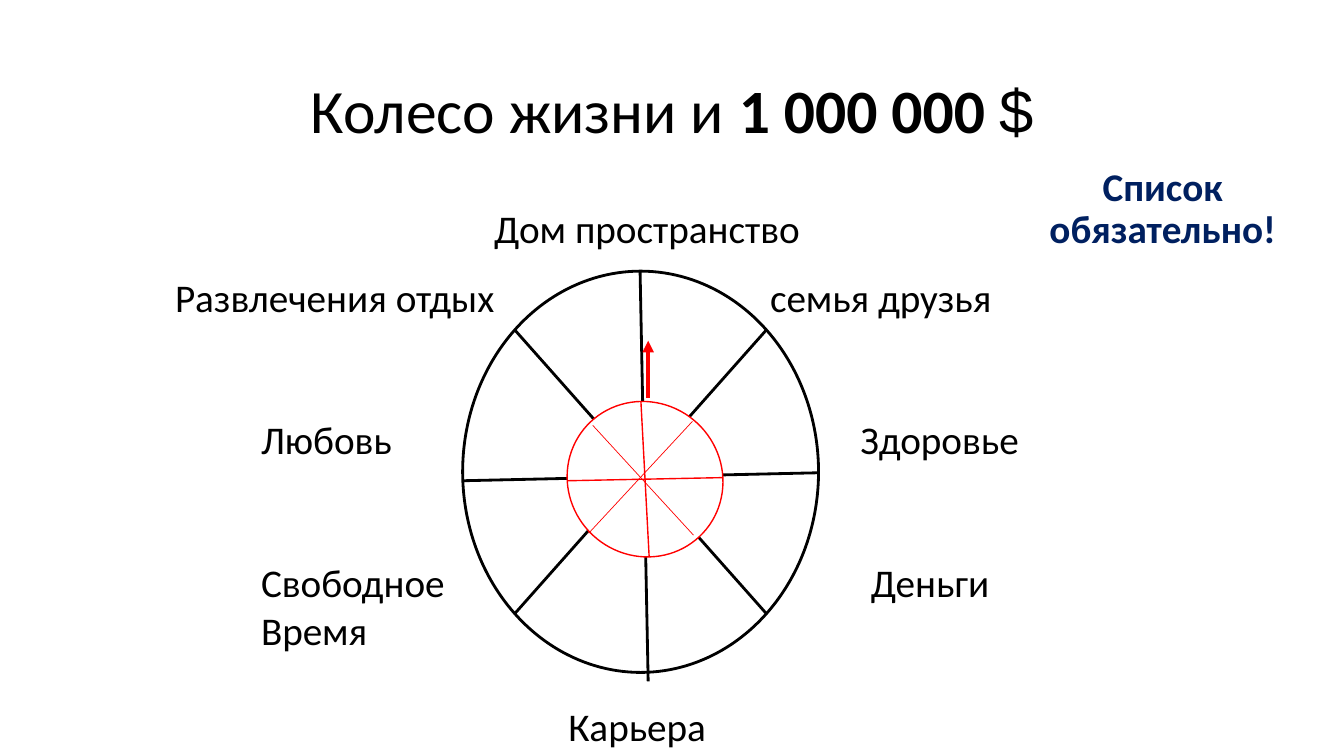
from dataclasses import dataclass

import pptx
import pptx.dml.color
import pptx.enum.shapes
import pptx.enum.text
import pptx.oxml
import pptx.oxml.ns
import pptx.util
from lxml import etree

Pt = pptx.util.Pt
COLORS = {"black": "000000", "white": "FFFFFF", "red": "FF0000", "navy": "002060"}


@dataclass
class Box:
    left: float
    top: float
    width: float
    height: float


@dataclass
class Wheel:
    box: Box
    color: str
    weight: float
    rotation: float = 0


@dataclass
class Spoke:
    start: tuple[float, float]
    end: tuple[float, float]
    color: str
    weight: float
    arrow: bool = False


@dataclass
class Label:
    text: str
    left: float
    top: float


LINE_HEIGHT = 34.2
FIRST_ROW = 296.5
LEFT_COLUMN = 186.5

OUTER_WHEEL = Wheel(Box(330.5, 193.7, 254.2, 286.6), "black", 2)
OUTER_SPOKES = [
    Spoke((457.2, 193.7), (463, 486.7), "black", 2),
    Spoke((584.6, 337.7), (330.5, 343.4), "black", 2),
]
INNER_WHEEL = Wheel(Box(406.1, 285.8, 109.4, 113), "red", 1, 312.9)
INNER_SPOKES = [
    Spoke((494.6, 301), (420.5, 380.9), "red", 0.5),
    Spoke((423.4, 303.8), (495.4, 382.3), "red", 0.5),
    Spoke((463, 284.4), (463, 243.4), "red", 2.75, arrow=True),
]
LABELS = [
    Label("Дом пространство", 353, 146),
    Label("Развлечения отдых", 125, 195),
    Label("семья друзья", 550, 195),
    Label("Любовь", LEFT_COLUMN, FIRST_ROW),
    Label("Здоровье", 614.5, FIRST_ROW),
    Label("Свободное\nВремя", LEFT_COLUMN, FIRST_ROW + 3 * LINE_HEIGHT),
    Label("Деньги", 622, FIRST_ROW + 3 * LINE_HEIGHT),
    Label("Карьера", 406, FIRST_ROW + 6 * LINE_HEIGHT),
]


def rgb(name: str) -> pptx.dml.color.RGBColor:
    return pptx.dml.color.RGBColor.from_string(COLORS[name])


def format_run(run, size: float, color: str = "black", bold: bool = False, font: str = "Calibri") -> None:
    run.font.name = font
    run.font.size = Pt(size)
    run.font.bold = bold
    run.font.color.rgb = rgb(color)


def place(shape, box: Box) -> None:
    shape.left, shape.top = Pt(box.left), Pt(box.top)
    shape.width, shape.height = Pt(box.width), Pt(box.height)


def center(paragraph) -> None:
    paragraph.alignment = pptx.enum.text.PP_ALIGN.CENTER
    paragraph.line_spacing = 0.9


def fill_title(title) -> None:
    place(title, Box(66.2, 28.8, 828, 104.4))
    title.text_frame.vertical_anchor = pptx.enum.text.MSO_ANCHOR.MIDDLE
    paragraph = title.text_frame.paragraphs[0]
    center(paragraph)
    for text, bold, font in [
        ("Колесо жизни и ", False, "Calibri"),
        ("1 000 000 ", True, "Calibri"),
        ("$", False, "Arial"),
    ]:
        run = paragraph.add_run()
        run.text = text
        format_run(run, 44, bold=bold, font=font)


def fill_body(body) -> None:
    place(body, Box(725, 115.9, 211, 336.2))
    body.text_frame.text = "Список обязательно!"
    paragraph = body.text_frame.paragraphs[0]
    center(paragraph)
    paragraph.space_before = Pt(10)
    format_run(paragraph.runs[0], 28, "navy", bold=True)
    properties = paragraph._p.get_or_add_pPr()
    properties.set("marL", "0")
    properties.set("indent", "0")
    etree.SubElement(properties, pptx.oxml.ns.qn("a:buNone"))


def draw_wheel(slide, wheel: Wheel) -> None:
    box = wheel.box
    shape = slide.shapes.add_shape(
        pptx.enum.shapes.MSO_SHAPE.FLOWCHART_SUMMING_JUNCTION,
        Pt(box.left), Pt(box.top), Pt(box.width), Pt(box.height),
    )
    shape.shadow.inherit = False
    shape.rotation = wheel.rotation
    shape.fill.solid()
    shape.fill.fore_color.rgb = rgb("white")
    shape.line.color.rgb = rgb(wheel.color)
    shape.line.width = Pt(wheel.weight)


def draw_spoke(slide, spoke: Spoke) -> None:
    connector = slide.shapes.add_connector(
        pptx.enum.shapes.MSO_CONNECTOR.STRAIGHT,
        *(Pt(value) for value in spoke.start + spoke.end),
    )
    connector.line.color.rgb = rgb(spoke.color)
    connector.line.width = Pt(spoke.weight)
    if spoke.arrow:
        line = connector.line._get_or_add_ln()
        etree.SubElement(line, pptx.oxml.ns.qn("a:tailEnd"), type="triangle")
    etree.SubElement(connector._element.spPr, pptx.oxml.ns.qn("a:effectLst"))


def draw_label(slide, label: Label) -> None:
    height = LINE_HEIGHT * len(label.text.splitlines())
    shape = slide.shapes.add_textbox(Pt(label.left), Pt(label.top), Pt(240), Pt(height))
    frame = shape.text_frame
    frame.word_wrap = True
    frame.margin_left = frame.margin_right = frame.margin_top = frame.margin_bottom = Pt(0)
    frame.text = label.text
    for paragraph in frame.paragraphs:
        format_run(paragraph.runs[0], 28)


def main() -> None:
    presentation = pptx.Presentation()
    presentation.slide_width, presentation.slide_height = Pt(960), Pt(540)
    slide = presentation.slides.add_slide(presentation.slide_layouts[1])
    fill_title(slide.shapes.title)
    fill_body(slide.placeholders[1])
    for wheel, spokes in [(OUTER_WHEEL, OUTER_SPOKES), (INNER_WHEEL, INNER_SPOKES)]:
        draw_wheel(slide, wheel)
        for spoke in spokes:
            draw_spoke(slide, spoke)
    for label in LABELS:
        draw_label(slide, label)
    presentation.save("out.pptx")


if __name__ == "__main__":
    main()
